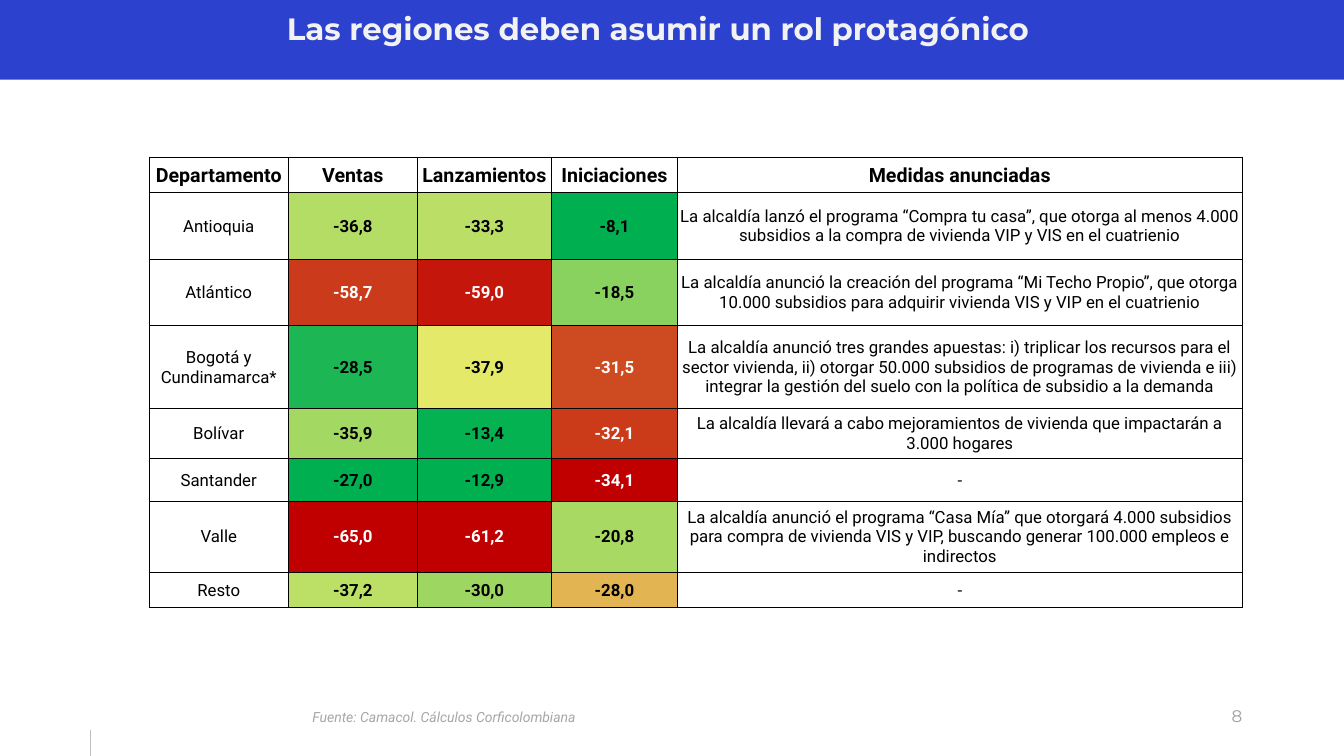
"""Build the slide on regional housing figures and announced measures."""
import pptx
import pptx.dml.color
import pptx.enum.shapes
import pptx.enum.text
import pptx.oxml
import pptx.oxml.ns
import pptx.util
from pptx.util import Inches

COLORS = {
    "band": "2C42CE", "title": "F2F2F2", "rule": "BFBFBF", "page": "9E9E9E",
    "source": "A6A6A6", "black": "000000", "white": "FFFFFF",
    "-36,8": "B4DD65", "-33,3": "BBDF66", "-8,1": "00B050",
    "-58,7": "CB3B1B", "-59,0": "C4160A", "-18,5": "89D260",
    "-28,5": "1CB754", "-37,9": "E5E96A", "-31,5": "CE4B22",
    "-35,9": "A3D963", "-13,4": "05B251", "-32,1": "CB3B1A",
    "-27,0": "00B050", "-12,9": "00B050", "-34,1": "C00000",
    "-65,0": "C00000", "-61,2": "C00000", "-20,8": "A8DA63",
    "-37,2": "BCDF66", "-30,0": "9DD762", "-28,0": "E3B452",
}
WHITE_FIGURES = {"-58,7", "-59,0", "-31,5", "-32,1", "-34,1", "-65,0", "-61,2"}
ROWS = [
    ("Departamento", "Ventas", "Lanzamientos", "Iniciaciones", "Medidas anunciadas"),
    ("Antioquia", "-36,8", "-33,3", "-8,1",
     "La alcaldía lanzó el programa “Compra tu casa”, que otorga al menos 4.000 "
     "subsidios a la compra de vivienda VIP y VIS en el cuatrienio"),
    ("Atlántico", "-58,7", "-59,0", "-18,5",
     "La alcaldía anunció la creación del programa “Mi Techo Propio”, que otorga "
     "10.000 subsidios para adquirir vivienda VIS y VIP en el cuatrienio"),
    ("Bogotá y Cundinamarca*", "-28,5", "-37,9", "-31,5",
     "La alcaldía anunció tres grandes apuestas: i) triplicar los recursos para el "
     "sector vivienda, ii) otorgar 50.000 subsidios de programas de vivienda e iii) "
     "integrar la gestión del suelo con la política de subsidio a la demanda"),
    ("Bolívar", "-35,9", "-13,4", "-32,1",
     "La alcaldía llevará a cabo mejoramientos de vivienda que impactarán a 3.000 hogares"),
    ("Santander", "-27,0", "-12,9", "-34,1", "-"),
    ("Valle", "-65,0", "-61,2", "-20,8",
     "La alcaldía anunció el programa “Casa Mía” que otorgará 4.000 subsidios "
     "para compra de vivienda VIS y VIP, buscando generar 100.000 empleos e indirectos"),
    ("Resto", "-37,2", "-30,0", "-28,0", "-"),
]
COLUMN_WIDTHS = [1.38, 1.28, 1.33, 1.25, 5.6]
ROW_HEIGHTS = [0.35, 0.66, 0.66, 0.82, 0.5, 0.42, 0.71, 0.35]
ALIGN = pptx.enum.text.PP_ALIGN


def rgb(name):
    return pptx.dml.color.RGBColor.from_string(COLORS[name])


def write(frame, text, size, font, color, align, bold=False, italic=False):
    frame.text = text
    frame.word_wrap = True
    paragraph = frame.paragraphs[0]
    paragraph.alignment = align
    run_font = paragraph.runs[0].font
    run_font.size = pptx.util.Pt(size)
    run_font.name = font
    run_font.color.rgb = rgb(color)
    run_font.bold = bold
    run_font.italic = italic


deck = pptx.Presentation()
deck.slide_width, deck.slide_height = Inches(13.33), Inches(7.5)
slide = deck.slides.add_slide(deck.slide_layouts[6])

band = slide.shapes.add_shape(
    pptx.enum.shapes.MSO_SHAPE.RECTANGLE, 0, 0, deck.slide_width, Inches(0.79))
band.shadow.inherit = False
band.fill.solid()
band.fill.fore_color.rgb = rgb("band")
band.line.fill.background()

footer_rule = slide.shapes.add_connector(
    pptx.enum.shapes.MSO_CONNECTOR.STRAIGHT,
    Inches(0.9), Inches(7.24), Inches(0.9), Inches(7.5))
footer_rule.line.color.rgb = rgb("rule")
footer_rule.line.width = pptx.util.Pt(1)
footer_rule._element.spPr.append(pptx.oxml.parse_xml(
    f'<a:effectLst {pptx.oxml.ns.nsdecls("a")}/>'))

title = slide.shapes.add_textbox(Inches(0.5), 0, Inches(12.05), Inches(0.76)).text_frame
title.margin_left = title.margin_right = title.margin_top = title.margin_bottom = Inches(0.1)
write(title, "Las regiones deben asumir un rol protagónico", 22, "Montserrat",
      "title", ALIGN.CENTER, bold=True)

page = slide.shapes.add_textbox(Inches(9.42), Inches(6.95), Inches(3), Inches(0.4))
write(page.text_frame, "8", 12, "Montserrat", "page", ALIGN.RIGHT)

source = slide.shapes.add_textbox(Inches(3), Inches(6.98), Inches(8.43), Inches(0.27))
write(source.text_frame, "Fuente: Camacol. Cálculos Corficolombiana", 10, "Roboto",
      "source", ALIGN.LEFT, italic=True)

measures = slide.shapes.add_table(
    len(ROWS), len(COLUMN_WIDTHS), Inches(1.48), Inches(1.56),
    Inches(sum(COLUMN_WIDTHS)), Inches(sum(ROW_HEIGHTS))).table
for column, width in zip(measures.columns, COLUMN_WIDTHS):
    column.width = Inches(width)
for row, height in zip(measures.rows, ROW_HEIGHTS):
    row.height = Inches(height)

for r, values in enumerate(ROWS):
    for c, value in enumerate(values):
        cell = measures.cell(r, c)
        cell.margin_left = cell.margin_right = cell.margin_top = Inches(0.01)
        cell.margin_bottom = 0
        cell.vertical_anchor = pptx.enum.text.MSO_ANCHOR.MIDDLE
        for side in ("lnL", "lnR", "lnT", "lnB"):
            cell._tc.get_or_add_tcPr().append(pptx.oxml.parse_xml(
                f'<a:{side} {pptx.oxml.ns.nsdecls("a")} w="6350"><a:solidFill>'
                f'<a:srgbClr val="{COLORS["black"]}"/></a:solidFill></a:{side}>'))
        cell.fill.solid()
        cell.fill.fore_color.rgb = rgb(value if value in COLORS else "white")
        write(cell.text_frame, value, 14 if r == 0 else 12, "Roboto",
              "white" if value in WHITE_FIGURES else "black", ALIGN.CENTER,
              bold=r == 0 or value in COLORS)

deck.save("out.pptx")
